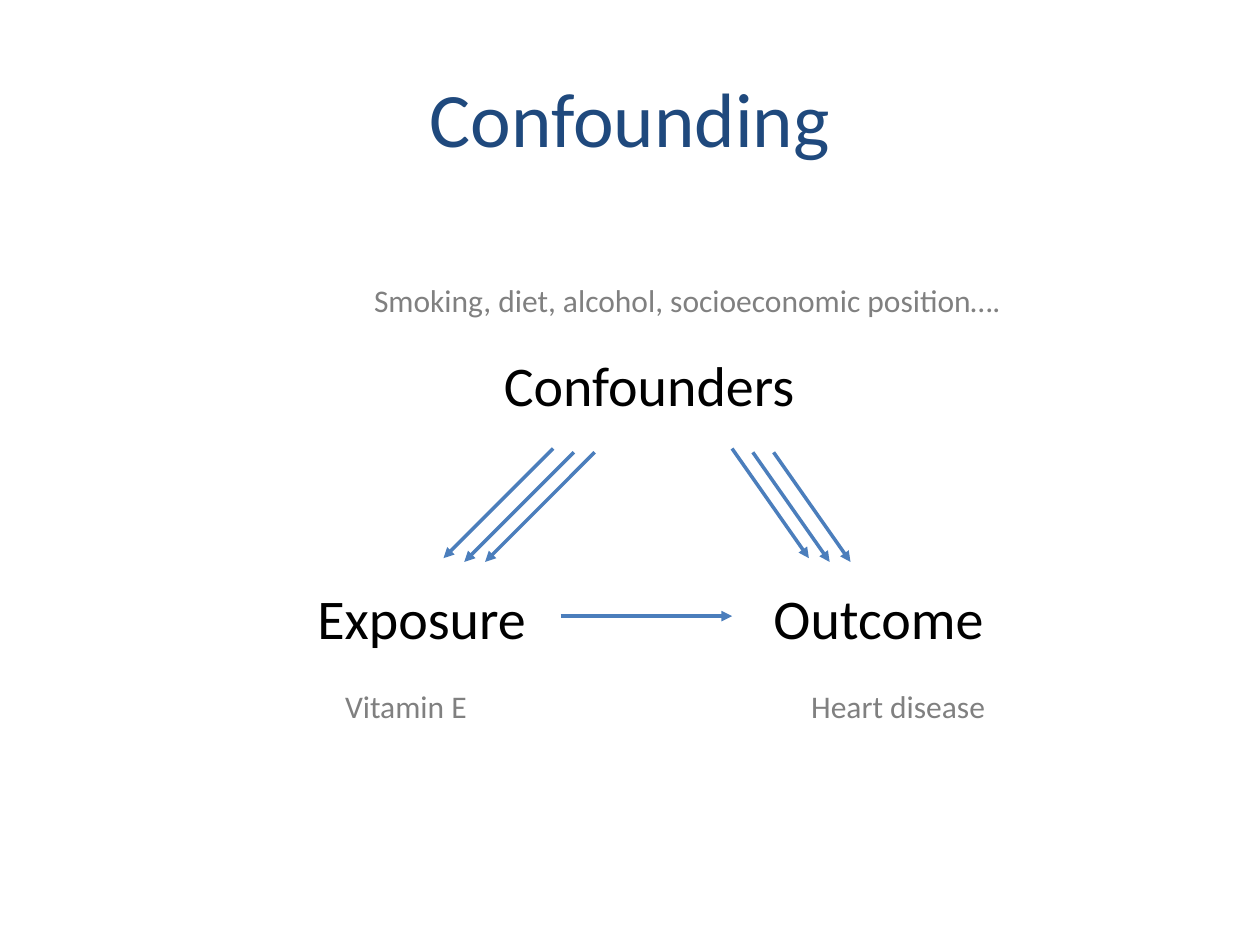
import pptx
import pptx.dml.color
import pptx.enum.shapes
import pptx.enum.text
import pptx.oxml.ns
import pptx.util
from lxml import etree

FONT = "Calibri"
NAVY, BLUE, BLACK, GRAY = "1F497D", "4B7EBC", "000000", "808080"
CELL = 0.25  # side of a grid cell, in inches


def color(hex_code):
    return pptx.dml.color.RGBColor.from_string(hex_code)


def place(box, col, row):
    """Turn a grid position inside a box into slide lengths."""
    left, top = box[:2]
    return pptx.util.Inches(left + col * CELL), pptx.util.Inches(top + row * CELL)


def add_label(slide, box, cell, text, size, ink, wrap=True):
    col, row, cols, rows = cell
    label = slide.shapes.add_textbox(
        *place(box, col, row),
        pptx.util.Inches(cols * CELL), pptx.util.Inches(rows * CELL))
    frame = label.text_frame
    frame.word_wrap = wrap
    paragraph = frame.paragraphs[0]
    paragraph.text = text
    paragraph.font.name = FONT
    paragraph.font.size = pptx.util.Pt(size)
    paragraph.font.color.rgb = color(ink)
    return frame


def add_arrow(slide, box, start, run):
    end = start[0] + run[0], start[1] + run[1]
    arrow = slide.shapes.add_connector(
        pptx.enum.shapes.MSO_CONNECTOR.STRAIGHT,
        *place(box, *start), *place(box, *end))
    arrow.line.color.rgb = color(BLUE)
    arrow.line.width = pptx.util.Pt(2)
    qn = pptx.oxml.ns.qn
    etree.SubElement(arrow.line._get_or_add_ln(), qn("a:tailEnd"), type="triangle")
    etree.SubElement(arrow._element.spPr, qn("a:effectLst"))


def add_title(slide, box):
    frame = add_label(slide, box, (0, 0, 36, 5), "Confounding", 44, NAVY)
    frame.vertical_anchor = pptx.enum.text.MSO_ANCHOR.MIDDLE
    frame.paragraphs[0].alignment = pptx.enum.text.PP_ALIGN.CENTER


def add_diagram(slide, box):
    # Concepts
    for text, cell in (("Confounders", (6, 2.2, 10.96, 2.56)),
                       ("Exposure", (0.08, 9.6, 7.8, 2.56)),
                       ("Outcome", (14.56, 9.6, 8.44, 2.56))):
        add_label(slide, box, cell, text, 32, BLACK)

    # Examples of each concept
    for text, cell, wrap in (
            ("Smoking, diet, alcohol, socioeconomic position….",
             (1.88, 0, 21.12, 1.6), True),
            ("Vitamin E", (0.96, 12.88, 4.72, 1.6), False),
            ("Heart disease", (15.76, 12.88, 6.4, 1.6), False)):
        add_label(slide, box, cell, text, 18, GRAY, wrap)

    # Exposure to outcome
    add_arrow(slide, box, (8.2, 10.84), (5.44, 0))

    # Confounders to exposure and to outcome, three arrows each
    for first_col, run in ((7.96, (-3.48, 3.48)), (13.64, (2.44, 3.48))):
        for index, row in enumerate((5.52, 5.64, 5.64)):
            add_arrow(slide, box, (first_col + index * 0.66, row), run)


def main():
    deck = pptx.Presentation()
    deck.slide_width = pptx.util.Inches(10)
    deck.slide_height = pptx.util.Inches(7.5)
    slide = deck.slides.add_slide(deck.slide_layouts[6])
    add_title(slide, (0.5, 0.3))
    add_diagram(slide, (2.4, 2.18))
    deck.save("out.pptx")


if __name__ == "__main__":
    main()
